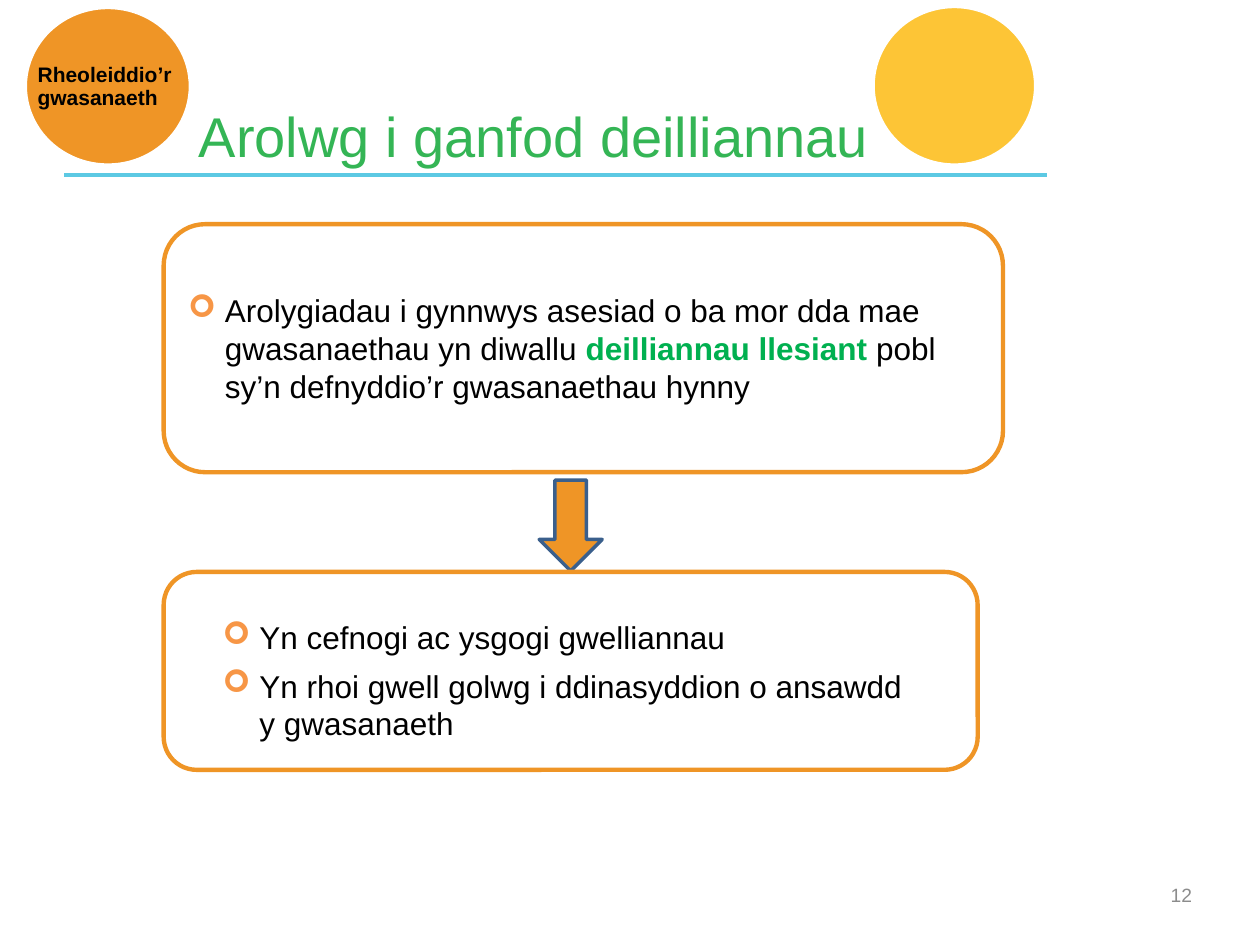
from lxml import etree
from pptx import Presentation
from pptx.dml.color import RGBColor
from pptx.enum.shapes import MSO_CONNECTOR, MSO_SHAPE
from pptx.enum.text import MSO_ANCHOR, PP_ALIGN
from pptx.oxml.ns import qn
from pptx.util import Cm, Pt

LINE = MSO_CONNECTOR.STRAIGHT
OVAL, ROUND, ARROW = MSO_SHAPE.OVAL, MSO_SHAPE.ROUNDED_RECTANGLE, MSO_SHAPE.DOWN_ARROW
TOP, MID, BASE = MSO_ANCHOR.TOP, MSO_ANCHOR.MIDDLE, MSO_ANCHOR.BOTTOM
LEFT, RIGHT = PP_ALIGN.LEFT, PP_ALIGN.RIGHT

ORANGE = RGBColor(0xEF, 0x95, 0x26)
YELLOW = RGBColor(0xFD, 0xC5, 0x36)
CYAN = RGBColor(0x5C, 0xC9, 0xE3)
NAVY = RGBColor(0x3A, 0x5F, 0x8C)
LIME = RGBColor(0x34, 0xB5, 0x55)
GREEN = RGBColor(0x00, 0xB0, 0x50)
GREY = RGBColor(0x8C, 0x8C, 0x8C)
BLACK = RGBColor(0, 0, 0)
WHITE = RGBColor(0xFF, 0xFF, 0xFF)
MARK, TINT = "➢", "F79646"


def add_mark(para):
    """Give a paragraph a hanging arrow bullet."""
    props = para._p.get_or_add_pPr()
    indent = Cm(0.74)
    props.set("marL", str(indent))
    props.set("indent", str(-indent))
    color = etree.SubElement(props, qn("a:buClr"))
    etree.SubElement(color, qn("a:srgbClr"), val=TINT)
    etree.SubElement(props, qn("a:buFont"), typeface="Wingdings")
    etree.SubElement(props, qn("a:buChar"), char=MARK)


def write(frame, paras, size=18, color=BLACK, bold=False, anchor=TOP,
          align=LEFT, marked=False, after=0, lines=None, inset=None):
    """Fill a frame; each paragraph is a list of strings or (string, colour) accents."""
    frame.word_wrap = True
    frame.vertical_anchor = anchor
    if inset is not None:
        frame.margin_left = frame.margin_right = inset
        frame.margin_top = frame.margin_bottom = inset
    for i, parts in enumerate(paras):
        para = frame.add_paragraph() if i else frame.paragraphs[0]
        if marked:
            add_mark(para)
        para.alignment = align
        para.space_after = Pt(after)
        if lines:
            para.line_spacing = lines
        for part in parts:
            accent = isinstance(part, tuple)
            run = para.add_run()
            run.text = part[0] if accent else part
            font = run.font
            font.name, font.size = "Arial", Pt(size)
            font.bold = bold or accent
            font.color.rgb = part[1] if accent else color


class Deck:
    def __init__(self):
        self.prs = Presentation()
        self.prs.slide_width, self.prs.slide_height = Cm(25.4), Cm(19.05)
        self.slide = self.prs.slides.add_slide(self.prs.slide_layouts[6])

    def shape(self, kind, x, y, w, h, line, fill=None, width=2):
        item = self.slide.shapes.add_shape(kind, Cm(x), Cm(y), Cm(w), Cm(h))
        item.shadow.inherit = False
        if fill is None:
            item.fill.background()
        else:
            item.fill.solid()
            item.fill.fore_color.rgb = fill
        item.line.color.rgb = line
        item.line.width = Pt(width)
        return item

    def panel(self, x, y, w, h):
        return self.shape(ROUND, x, y, w, h, ORANGE, width=2.5)

    def text(self, x, y, w, h, paras, **style):
        box = self.slide.shapes.add_textbox(Cm(x), Cm(y), Cm(w), Cm(h))
        write(box.text_frame, paras, **style)

    def rule(self, x, y, end, color):
        item = self.slide.shapes.add_connector(LINE, Cm(x), Cm(y), Cm(end), Cm(y))
        item.line.color.rgb = color
        item.line.width = Pt(2)
        etree.SubElement(item._element.spPr, qn("a:effectLst"))


def main():
    deck = Deck()
    deck.rule(1.3, 3.53, 21.11, CYAN)
    deck.text(18.36, 17.53, 5.92, 1.02, [["12"]], size=11, color=GREY,
              anchor=MID, align=RIGHT)

    deck.shape(OVAL, 0.51, 0.15, 3.33, 3.18, WHITE, ORANGE)
    deck.text(0.71, 0.13, 3.94, 3.25, [["Rheoleiddio’r gwasanaeth"]], size=12,
              bold=True, anchor=MID, lines=0.9, inset=Cm(0.05))

    deck.shape(ARROW, 10.87, 9.68, 1.27, 1.83, NAVY, ORANGE)
    survey = deck.panel(3.3, 4.52, 16.92, 5)
    write(survey.text_frame, [[
        "Arolygiadau i gynnwys asesiad o ba mor dda mae gwasanaethau yn diwallu ",
        ("deilliannau llesiant ", GREEN),
        "pobl sy’n defnyddio’r gwasanaethau hynny",
    ]], anchor=MID, marked=True, after=6)

    deck.text(4.24, 12.34, 14.58, 2.77, [
        ["Yn cefnogi ac ysgogi gwelliannau"],
        ["Yn rhoi gwell golwg i ddinasyddion o ansawdd y gwasanaeth"],
    ], marked=True, after=6)
    deck.text(3.76, 0.76, 15.98, 2.77, [["Arolwg i ganfod deilliannau"]],
              size=32, color=LIME, anchor=BASE)
    deck.shape(OVAL, 17.6, 0.13, 3.28, 3.2, WHITE, YELLOW)
    deck.panel(3.3, 11.53, 16.41, 3.99)
    deck.prs.save("out.pptx")


if __name__ == "__main__":
    main()
